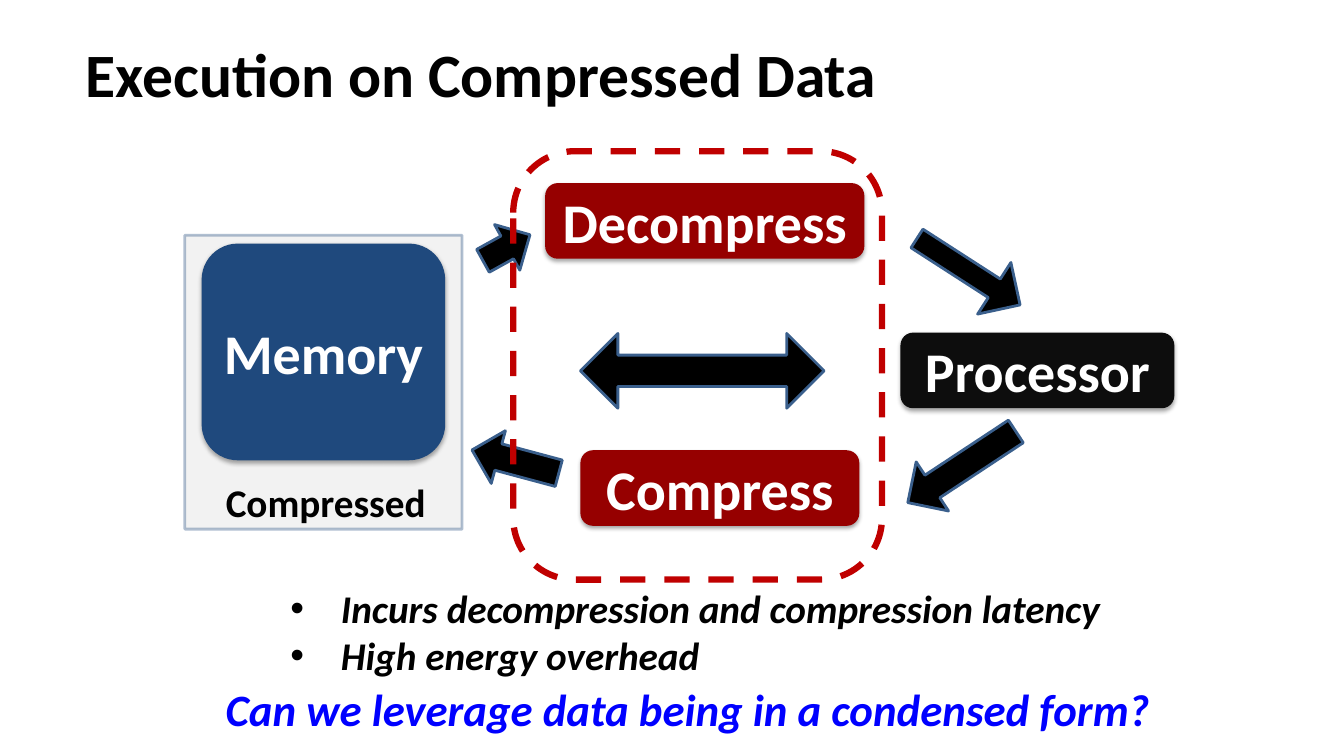
from lxml import etree
from pptx import Presentation
from pptx.dml.color import RGBColor
from pptx.enum.dml import MSO_LINE
from pptx.enum.shapes import MSO_SHAPE as Preset
from pptx.enum.text import MSO_ANCHOR as Anchor, MSO_AUTO_SIZE as AutoSize, PP_ALIGN as Align
from pptx.oxml import parse_xml
from pptx.oxml.ns import nsdecls, qn
from pptx.util import Inches, Pt

COLORS = {
    "ink": "000000", "paper": "FFFFFF", "panel": "F2F2F2", "edge": "3A5F8C",
    "memory": "1F497D", "codec": "960000", "processor": "0D0D0D",
    "frame": "C00000", "question": "0000FF",
}
COLUMNS, ROWS = 160, 90

SHADOW = (
    f'<a:effectLst {nsdecls("a")}>'
    f'<a:outerShdw blurRad="{Pt(3.1)}" dist="{Pt(1.8)}" dir="5400000" rotWithShape="0">'
    '<a:srgbClr val="000000"><a:alpha val="35000"/></a:srgbClr>'
    '</a:outerShdw></a:effectLst>'
)


class Diagram:
    """Draws on one slide; boxes are (column, row, columns, rows) of a 160 by 90 grid."""

    font = "Calibri"

    def __init__(self, deck):
        self.slide = deck.slides.add_slide(deck.slide_layouts[6])
        self.column = deck.slide_width / COLUMNS
        self.row = deck.slide_height / ROWS

    def place(self, box):
        left, top, width, height = box
        return [round(n) for n in (left * self.column, top * self.row,
                                   width * self.column, height * self.row)]

    def color(self, name):
        return RGBColor.from_string(COLORS[name])

    def set_text(self, frame, lines, size, color, italic=False, align=Align.LEFT):
        frame.text = "\n".join(lines)
        for paragraph in frame.paragraphs:
            paragraph.alignment = align
            for run in paragraph.runs:
                font = run.font
                font.name, font.size, font.bold, font.italic = self.font, Pt(size), True, italic
                font.color.rgb = self.color(color)

    def outline(self, preset, box, fill=None, line=None, weight=2):
        shape = self.slide.shapes.add_shape(preset, *self.place(box))
        shape.shadow.inherit = False
        if fill:
            shape.fill.solid()
            shape.fill.fore_color.rgb = self.color(fill)
        else:
            shape.fill.background()
        if line:
            shape.line.color.rgb = self.color(line)
            shape.line.width = Pt(weight)
        else:
            shape.line.fill.background()
        return shape

    def panel(self, box):
        """Pale backing with a translucent edge."""
        backing = self.outline(Preset.RECTANGLE, box, "panel", "edge")
        tint = backing.element.spPr.find(qn("a:ln")).find(".//" + qn("a:srgbClr"))
        etree.SubElement(tint, qn("a:alpha")).set("val", "40000")

    def block(self, label, box, fill):
        unit = self.outline(Preset.ROUNDED_RECTANGLE, box, fill)
        properties = unit.element.spPr
        properties.replace(properties.find(qn("a:effectLst")), parse_xml(SHADOW))
        frame = unit.text_frame
        frame.word_wrap = True
        frame.vertical_anchor = Anchor.MIDDLE
        self.set_text(frame, [label], 40, "paper", align=Align.CENTER)

    def arrow(self, box, turn=0, shaft=0.5, preset=Preset.RIGHT_ARROW):
        flow = self.outline(preset, box, "ink", "edge")
        flow.adjustments[0] = shaft
        flow.adjustments[1] = 0.5
        flow.rotation = turn

    def dashed_frame(self, box):
        border = self.outline(Preset.ROUNDED_RECTANGLE, box, line="frame", weight=4.5)
        border.line.dash_style = MSO_LINE.DASH

    def title(self, words, box):
        frame = self.slide.shapes.add_textbox(*self.place(box)).text_frame
        frame.word_wrap = True
        frame.vertical_anchor = Anchor.MIDDLE
        self.set_text(frame, [words], 44, "ink")

    def caption(self, lines, box, size=28, color="ink", italic=False):
        frame = self.slide.shapes.add_textbox(*self.place(box)).text_frame
        frame.word_wrap = False
        frame.auto_size = AutoSize.SHAPE_TO_FIT_TEXT
        self.set_text(frame, lines, size, color, italic)
        return frame

    def bullets(self, lines, box):
        for paragraph in self.caption(lines, box, italic=True).paragraphs:
            properties = paragraph._p.get_or_add_pPr()
            properties.set("marL", str(Inches(0.5)))
            properties.set("indent", str(-Inches(0.5)))
            etree.SubElement(properties, qn("a:buFont")).set("typeface", "Arial")
            etree.SubElement(properties, qn("a:buChar")).set("char", "•")


def main():
    deck = Presentation()
    deck.slide_width, deck.slide_height = Inches(13.33), Inches(7.5)
    diagram = Diagram(deck)

    diagram.panel((22, 28, 33, 35))
    diagram.title("Execution on Compressed Data", (9, 1.2, 117, 15))
    for label, box, fill in (
        ("Processor", (107.2, 39.6, 32.6, 9), "processor"),
        ("Memory", (24, 29, 29, 25.8), "memory"),
        ("Decompress", (64.9, 21.8, 38, 9), "codec"),
        ("Compress", (69.1, 53.6, 33.2, 9), "codec"),
    ):
        diagram.block(label, box, fill)
    diagram.caption(["Compressed"], (25.7, 56.3, 26.4, 6.8))

    diagram.arrow((69.1, 39.7, 29, 8.9), shaft=0.42, preset=Preset.LEFT_RIGHT_ARROW)
    for box, turn, shaft in (
        ((57.1, 26.4, 6.4, 6.2), 331, 0.5),
        ((108, 28.7, 14.6, 7.3), 32.8, 0.36),
        ((106.8, 52.1, 15.4, 7), 146.6, 0.46),
        ((56, 51.7, 10.7, 6.5), 195, 0.5),
    ):
        diagram.arrow(box, turn, shaft)

    diagram.bullets(["Incurs decompression and compression latency", "High energy overhead"],
                    (33.4, 69, 99.7, 18.1))
    diagram.dashed_frame((61.1, 18, 43.9, 51))
    diagram.caption(["Can we leverage data being in a condensed form?"],
                    (25.7, 80.6, 113.5, 7.7), 32, "question", italic=True)
    deck.save("out.pptx")


if __name__ == "__main__":
    main()
